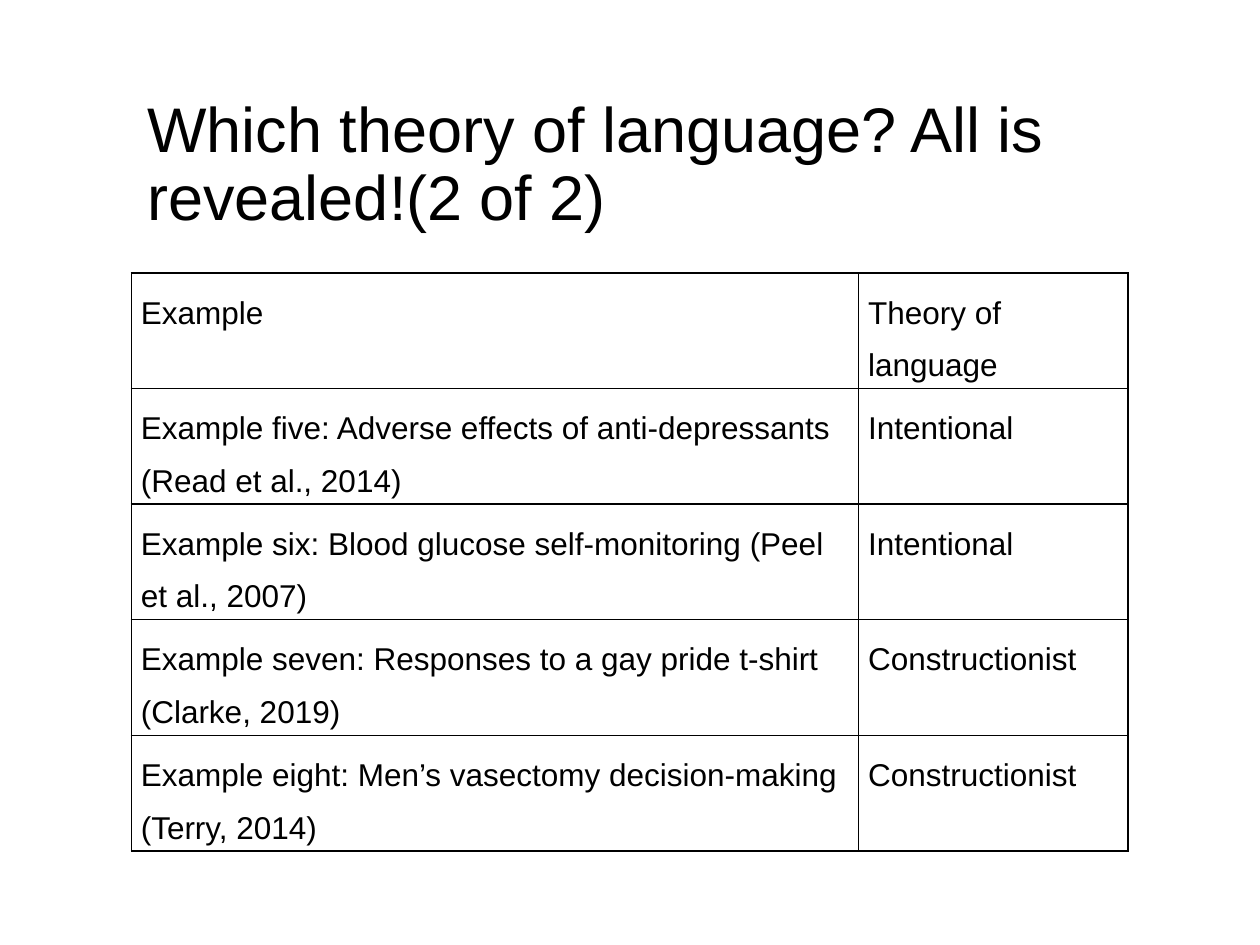
import pptx
import pptx.dml.color
import pptx.enum.text
import pptx.oxml
import pptx.oxml.ns
import pptx.util

Pt = pptx.util.Pt
BLACK = pptx.dml.color.RGBColor(0, 0, 0)
WHITE = pptx.dml.color.RGBColor(255, 255, 255)
FONT = "Arial"

TITLE = "Which theory of language? All is revealed!(2 of 2)"
EXAMPLES = [
    ("Example", "Theory of language"),
    ("Example five: Adverse effects of anti-depressants (Read et al., 2014)", "Intentional"),
    ("Example six: Blood glucose self-monitoring (Peel et al., 2007)", "Intentional"),
    ("Example seven: Responses to a gay pride t-shirt (Clarke, 2019)", "Constructionist"),
    ("Example eight: Men’s vasectomy decision-making (Terry, 2014)", "Constructionist"),
]
COLUMN_WIDTHS = (415.6, 154)
ROW_HEIGHT = 66.05


def write_text(frame, text, size, line_spacing, color=BLACK):
    frame.word_wrap = True
    paragraph = frame.paragraphs[0]
    paragraph.line_spacing = line_spacing
    run = paragraph.add_run()
    run.text = text
    run.font.name = FONT
    run.font.size = Pt(size)
    run.font.color.rgb = color


def add_title(slide, text):
    title = slide.shapes.add_textbox(Pt(77.2), Pt(42.5), Pt(569.5), Pt(104.4))
    title.text_frame.vertical_anchor = pptx.enum.text.MSO_ANCHOR.MIDDLE
    write_text(title.text_frame, text, size=36, line_spacing=0.9)


def add_borders(cell, color=BLACK, width=1):
    properties = cell._tc.get_or_add_tcPr()
    for side in ("lnL", "lnR", "lnT", "lnB"):
        properties.append(pptx.oxml.parse_xml(
            f'<a:{side} {pptx.oxml.ns.nsdecls("a")} w="{Pt(width)}">'
            f'<a:solidFill><a:srgbClr val="{color}"/></a:solidFill></a:{side}>'))


def format_cell(cell, text):
    cell.margin_left = cell.margin_right = Pt(5.4)
    cell.margin_top = cell.margin_bottom = Pt(2.85)
    add_borders(cell)
    cell.fill.solid()
    cell.fill.fore_color.rgb = WHITE
    write_text(cell.text_frame, text, size=18, line_spacing=Pt(30.15))


def add_theory_table(slide, rows):
    theories = slide.shapes.add_table(
        len(rows), len(COLUMN_WIDTHS), Pt(75.1), Pt(156),
        Pt(sum(COLUMN_WIDTHS)), Pt(ROW_HEIGHT * len(rows))).table
    theories.first_row = theories.horz_banding = False
    for column, width in zip(theories.columns, COLUMN_WIDTHS):
        column.width = Pt(width)
    for row, texts in zip(theories.rows, rows):
        row.height = Pt(ROW_HEIGHT)
        for cell, text in zip(row.cells, texts):
            format_cell(cell, text)


def main():
    deck = pptx.Presentation()
    deck.slide_width, deck.slide_height = Pt(720), Pt(540)
    slide = deck.slides.add_slide(deck.slide_layouts[6])

    # Heading
    add_title(slide, TITLE)

    # Examples and the theory each one uses
    add_theory_table(slide, EXAMPLES)

    deck.save("out.pptx")


if __name__ == "__main__":
    main()
